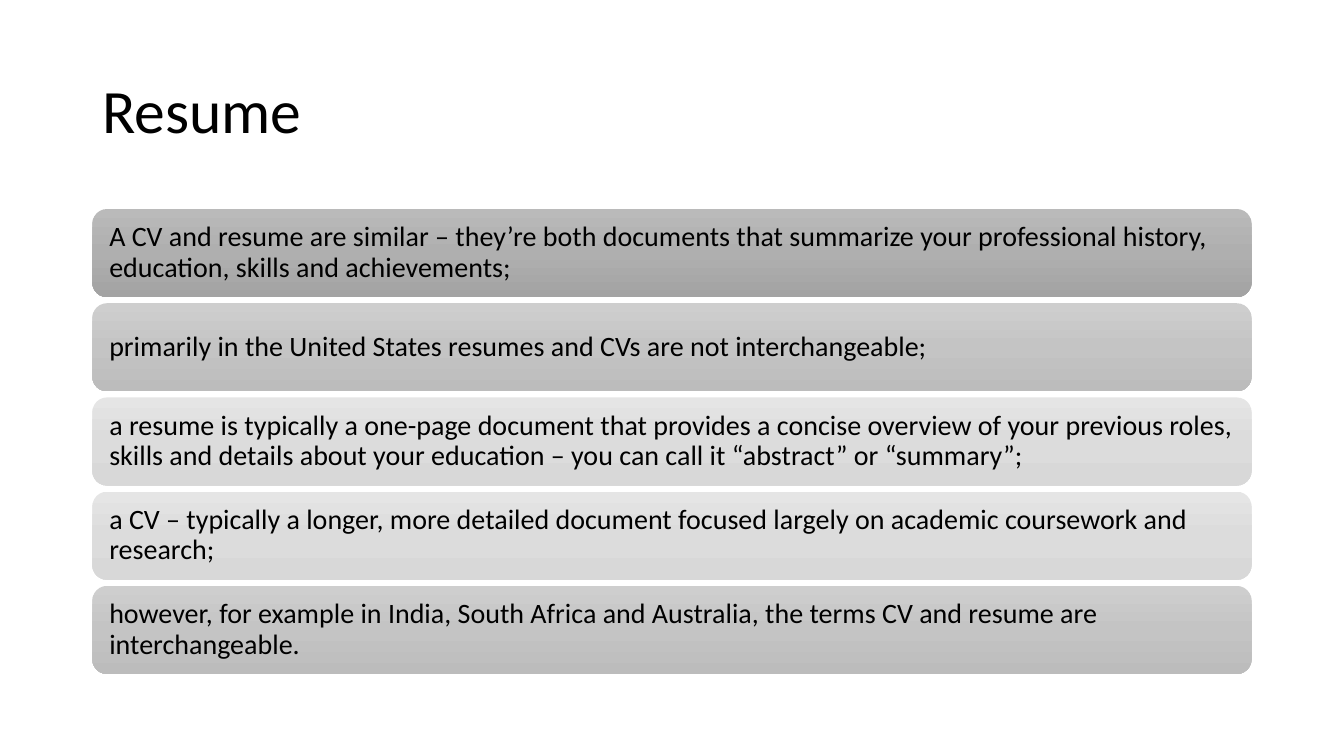
from copy import deepcopy
from dataclasses import dataclass

from pptx import Presentation
from pptx.dml.color import RGBColor
from pptx.enum.shapes import MSO_SHAPE as Preset
from pptx.enum.text import MSO_ANCHOR as Anchor, PP_ALIGN as Align
from pptx.oxml.ns import qn
from pptx.shapes.autoshape import Shape
from pptx.slide import Slide
from pptx.util import Pt


@dataclass(frozen=True)
class Theme:
    font: str = "Calibri"
    title_size: float = 44
    body_size: float = 20
    ink: str = "000000"
    dark: tuple[str, ...] = ("BABABA", "AFAFAF", "A3A3A3")
    medium: tuple[str, ...] = ("CECECE", "C4C4C4", "BCBCBC")
    light: tuple[str, ...] = ("E5E5E5", "DCDCDC", "D8D8D8")


@dataclass(frozen=True)
class Statement:
    text: str
    shades: tuple[str, ...]


THEME = Theme()
PAGE_WIDTH, PAGE_HEIGHT = 960, 540
LEFT, WIDTH = 66, 828
TITLE_TOP, TITLE_HEIGHT = 28.75, 104.4
FIRST_TOP, BAR_HEIGHT, BAR_PITCH = 149.3, 62.9, 67.3

STATEMENTS = (
    Statement(
        "A CV and resume are similar – they’re both documents that summarize "
        "your professional history, education, skills and achievements;",
        THEME.dark,
    ),
    Statement(
        "primarily in the United States resumes and CVs are not interchangeable;",
        THEME.medium,
    ),
    Statement(
        "a resume is typically a one-page document that provides a concise overview "
        "of your previous roles, skills and details about your education – "
        "you can call it “abstract” or “summary”;",
        THEME.light,
    ),
    Statement(
        "a CV – typically a longer, more detailed document focused largely on "
        "academic coursework and research;",
        THEME.light,
    ),
    Statement(
        "however, for example in India, South Africa and Australia, "
        "the terms CV and resume are interchangeable.",
        THEME.medium,
    ),
)


def write_text(shape: Shape, text: str, size: float, inset: float) -> None:
    frame = shape.text_frame
    frame_format = {
        "word_wrap": True,
        "vertical_anchor": Anchor.MIDDLE,
        "margin_left": Pt(inset),
        "margin_right": Pt(inset),
        "margin_top": Pt(3.6),
        "margin_bottom": Pt(3.6),
    }
    for name, value in frame_format.items():
        setattr(frame, name, value)
    para = frame.paragraphs[0]
    para.alignment = Align.LEFT
    para.line_spacing = 0.9
    span = para.add_run()
    span.text = text
    for name, value in {"name": THEME.font, "size": Pt(size)}.items():
        setattr(span.font, name, value)
    span.font.color.rgb = RGBColor.from_string(THEME.ink)


def shade(shape: Shape, shades: tuple[str, ...]) -> None:
    shape.fill.gradient()
    shape.fill.gradient_angle = 270
    stop_list = shape.fill._xPr.find(qn("a:gradFill")).find(qn("a:gsLst"))
    stop_list.append(deepcopy(stop_list[-1]))
    for index, (stop, colour) in enumerate(zip(shape.fill.gradient_stops, shades)):
        stop.position = index / (len(shades) - 1)
        stop.color.rgb = RGBColor.from_string(colour)


def draw_title(page: Slide, text: str) -> None:
    box = page.shapes.add_textbox(
        Pt(LEFT), Pt(TITLE_TOP), Pt(WIDTH), Pt(TITLE_HEIGHT)
    )
    write_text(box, text, THEME.title_size, 7.2)


def draw_statement(page: Slide, statement: Statement, top: float) -> None:
    bar = page.shapes.add_shape(
        Preset.ROUNDED_RECTANGLE, Pt(LEFT), Pt(top), Pt(WIDTH), Pt(BAR_HEIGHT)
    )
    bar.shadow.inherit = False
    bar.line.fill.background()
    shade(bar, statement.shades)
    write_text(bar, statement.text, THEME.body_size, 9)


def main() -> None:
    deck = Presentation()
    deck.slide_width, deck.slide_height = Pt(PAGE_WIDTH), Pt(PAGE_HEIGHT)
    page = deck.slides.add_slide(deck.slide_layouts[6])
    draw_title(page, "Resume")
    for index, statement in enumerate(STATEMENTS):
        draw_statement(page, statement, FIRST_TOP + index * BAR_PITCH)
    deck.save("out.pptx")


if __name__ == "__main__":
    main()
